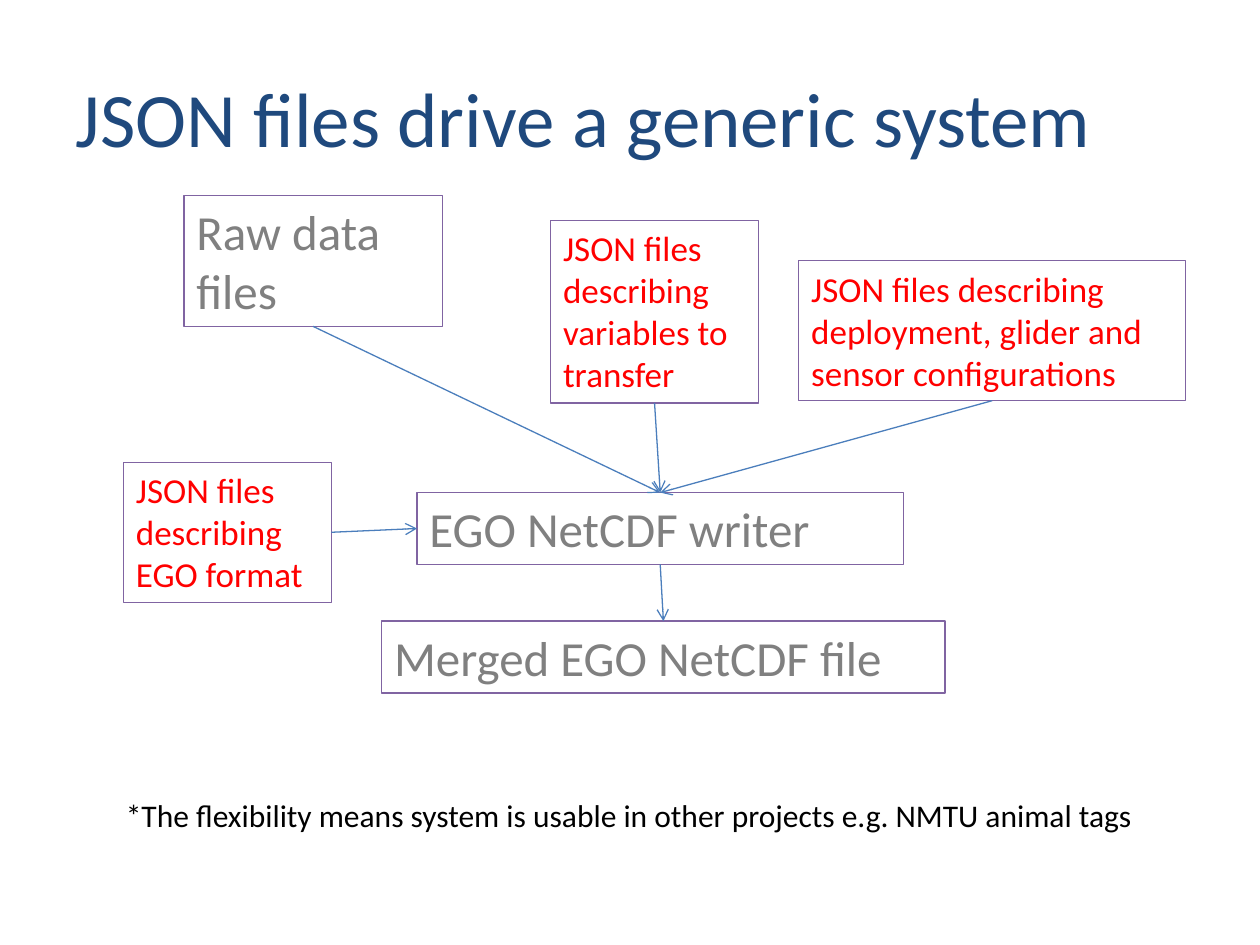
import pptx
import pptx.dml.color
import pptx.enum.shapes
import pptx.enum.text
import pptx.oxml
import pptx.oxml.ns
import pptx.util

COLORS = {
    "title": "1F497D",
    "component": "808080",
    "json": "FF0000",
    "note": "000000",
    "border": "8064A2",
    "arrow": "4B7EBC",
}
SIZES = {"title": 44, "component": 28, "json": 20, "note": 18}
FONT = "Calibri"
SLIDE_WIDTH = pptx.util.Inches(10)
SLIDE_HEIGHT = pptx.util.Inches(7.5)
TOP, LEFT, BOTTOM, RIGHT = range(4)

TITLE = ("JSON files drive a generic system", (5, 4, 90, 16.67))
NOTE = (
    "*The flexibility means system is usable in other projects e.g. NMTU animal tags",
    (9, 83.6, 82.5, 5.33),
)
BOXES = {
    "writer": ("component", "EGO NetCDF writer", (33.1, 52.13, 38.6, 7.6)),
    "raw": ("component", "Raw data files", (14.6, 20.67, 20.5, 13.87)),
    "merged": ("component", "Merged EGO NetCDF file", (30.3, 65.73, 44.7, 7.6)),
    "format": ("json", "JSON files\ndescribing\nEGO format", (9.8, 48.93, 16.5, 14.8)),
    "variables": (
        "json",
        "JSON files\ndescribing\nvariables to\ntransfer",
        (43.7, 23.33, 16.5, 19.33),
    ),
    "deployment": (
        "json",
        "JSON files describing\ndeployment, glider and sensor configurations",
        (63.4, 27.6, 30.7, 14.8),
    ),
}
ARROWS = [
    ("raw", BOTTOM, "writer", TOP),
    ("writer", BOTTOM, "merged", TOP),
    ("format", RIGHT, "writer", LEFT),
    ("deployment", BOTTOM, "writer", TOP),
    ("variables", BOTTOM, "writer", TOP),
]


def color(name):
    return pptx.dml.color.RGBColor.from_string(COLORS[name])


def place(percentages):
    lengths = (SLIDE_WIDTH, SLIDE_HEIGHT) * 2
    return [int(length * share / 100) for length, share in zip(lengths, percentages)]


def write(shape, text, style, anchor=pptx.enum.text.MSO_ANCHOR.TOP, wrap=True):
    frame = shape.text_frame
    frame.text = text
    frame.word_wrap = wrap
    frame.vertical_anchor = anchor
    for paragraph in frame.paragraphs:
        paragraph.alignment = pptx.enum.text.PP_ALIGN.LEFT
        for run in paragraph.runs:
            run.font.name = FONT
            run.font.size = pptx.util.Pt(SIZES[style])
            run.font.color.rgb = color(style)


def add_title(slide):
    text, area = TITLE
    title = slide.shapes.title
    title.left, title.top, title.width, title.height = place(area)
    write(title, text, "title", pptx.enum.text.MSO_ANCHOR.MIDDLE)


def add_box(slide, style, text, area):
    box = slide.shapes.add_shape(pptx.enum.shapes.MSO_SHAPE.RECTANGLE, *place(area))
    box.shadow.inherit = False
    box.fill.background()
    box.line.color.rgb = color("border")
    box.line.width = pptx.util.Pt(0.75)
    write(box, text, style)
    return box


def add_arrow(slide, source, source_side, target, target_side):
    arrow = slide.shapes.add_connector(
        pptx.enum.shapes.MSO_CONNECTOR.STRAIGHT, 0, 0, 0, 0
    )
    arrow.begin_connect(source, source_side)
    arrow.end_connect(target, target_side)
    arrow.line.color.rgb = color("arrow")
    arrow.line.width = pptx.util.Pt(0.75)
    namespace = pptx.oxml.ns.nsdecls("a")
    line = arrow.line._get_or_add_ln()
    line.append(pptx.oxml.parse_xml(f'<a:tailEnd {namespace} type="arrow"/>'))
    properties = arrow._element.spPr
    properties.append(pptx.oxml.parse_xml(f"<a:effectLst {namespace}/>"))


def add_note(slide):
    text, area = NOTE
    note = slide.shapes.add_textbox(*place(area))
    write(note, text, "note", wrap=False)


def main():
    presentation = pptx.Presentation()
    presentation.slide_width = SLIDE_WIDTH
    presentation.slide_height = SLIDE_HEIGHT
    title_only = presentation.slide_layouts.get_by_name("Title Only")
    slide = presentation.slides.add_slide(title_only)
    add_title(slide)
    boxes = {name: add_box(slide, *content) for name, content in BOXES.items()}
    for source, source_side, target, target_side in ARROWS:
        add_arrow(slide, boxes[source], source_side, boxes[target], target_side)
    add_note(slide)
    presentation.save("out.pptx")


if __name__ == "__main__":
    main()
